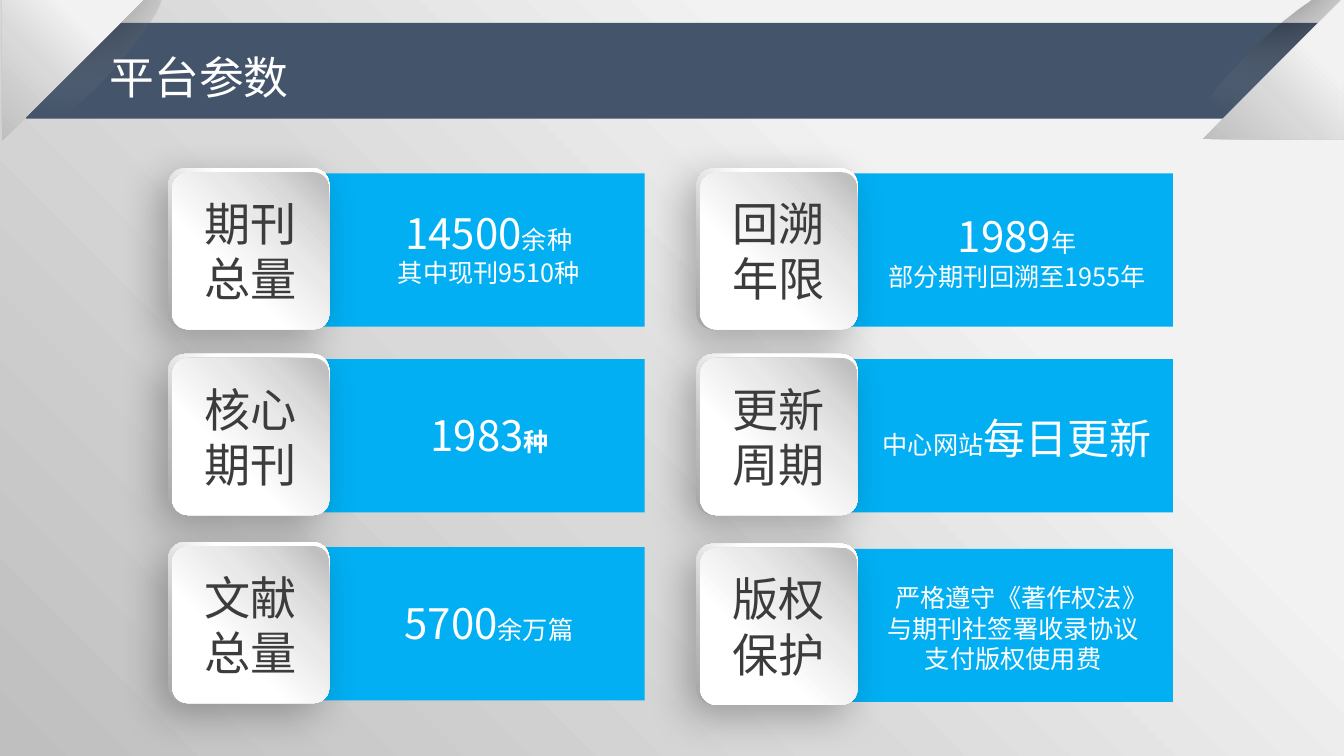
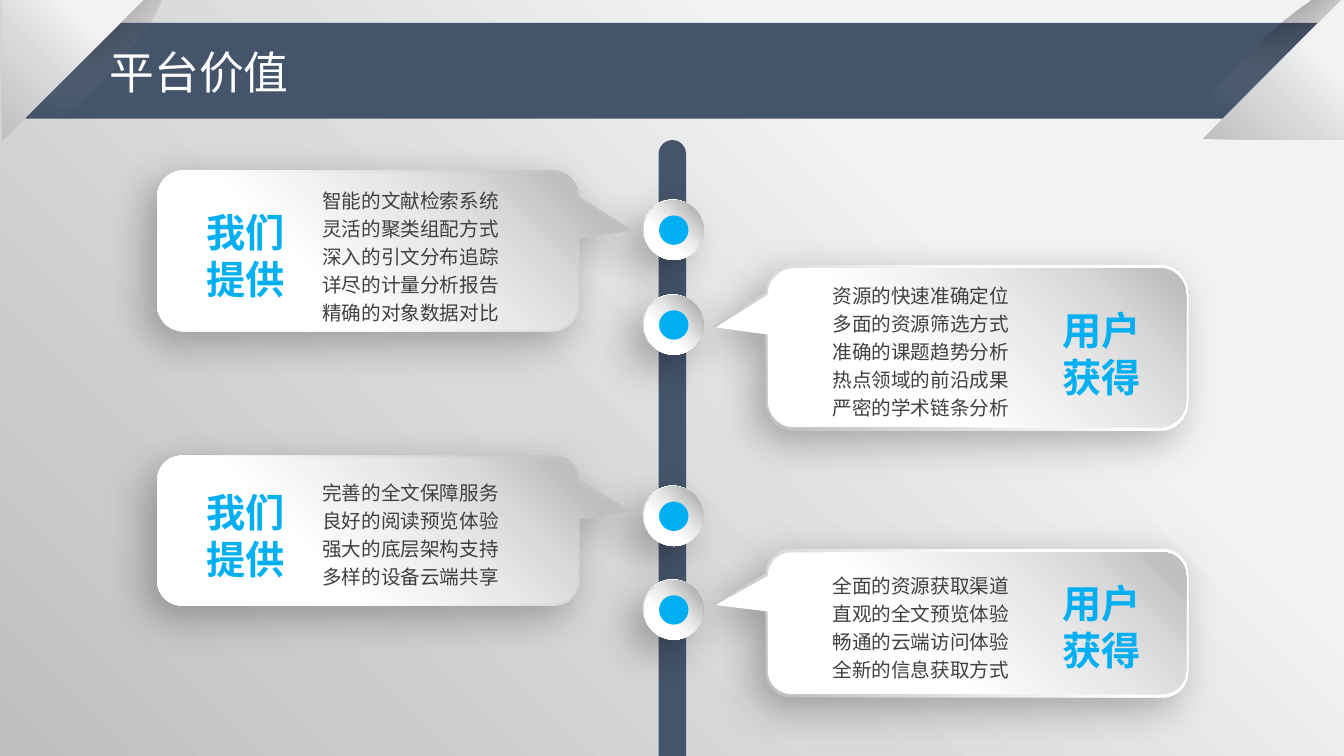
import pptx
import pptx.dml.color
import pptx.enum.shapes
import pptx.enum.text
import pptx.oxml
import pptx.oxml.ns
import pptx.util

Cm, Pt = pptx.util.Cm, pptx.util.Pt
qn = pptx.oxml.ns.qn
SHAPE = pptx.enum.shapes.MSO_SHAPE
CENTER = pptx.enum.text.PP_ALIGN.CENTER
LEFT = pptx.enum.text.PP_ALIGN.LEFT

# Shared style
FONT = "Noto Sans CJK SC"
NAVY, BLUE, WHITE = "44546A", "02AFF3", "FFFFFF"
CARD_TEXT, LIST_TEXT = "3C3C3C", "404040"
TOP_RIGHT, BOTTOM_LEFT = (100, 0, 0, 100), (0, 100, 100, 0)
BAND_SHADE = (50, -80, 50, 180)

# Gradients: stops of position, colour and optional opacity
BACKDROP = [(9, "F2F2F2"), (29, "F2F2F2"), (59, "D9D9D9"), (100, "BFBFBF")]
SHADE = [(0, "404040", 40), (32, "000000", 30), (100, "E7E6E6", 0)]
CARD_RIM = [(0, WHITE), (35, WHITE), (74, "BFBFBF"), (100, "A6A6A6")]
FACE = [(0, WHITE), (35, WHITE), (63, "E9E9E9"), (79, "D9D9D9"), (95, "BFBFBF")]
RIM = [(0, WHITE), (35, WHITE), (100, "BFBFBF")]
KNOB = [(0, WHITE), (35, WHITE), (56, "E9E9E9"), (95, "A6A6A6")]

# Parameter cards: title, column, top, text offset, first line indent, lines of runs
COLUMN_LEFTS = (4.24, 17.55)
CARDS = [
    ("期刊总量", 0, 4.24, (0, 0.86), 0, [[("14500", 30), ("余种", 18)], [("其中现刊9510种", 18)]]),
    ("核心期刊", 0, 8.92, (0.02, 1.27), 0, [[("1983", 30), ("种", 18, True)]]),
    ("文献总量", 0, 13.66, (0, 1.27), 0, [[("5700", 30), ("余万篇", 18)]]),
    ("回溯年限", 1, 4.24, (0, 0.94), 0, [[("1989", 30), ("年", 18)], [("部分期刊回溯至1955年", 18)]]),
    ("更新周期", 1, 8.92, (0, 1.35), 0, [[("中心网站", 18), ("每日更新", 30)]]),
    ("版权保护", 1, 13.7, (-0.1, 0.86), 0.42,
     [[("严格遵守《著作权法》", 18)], [("与期刊社签署收录协议", 18)], [("支付版权使用费", 18)]]),
]

# Timeline sides: heading, callout left, heading left, list left, mirrored, glow, angle
SIDES = {
    "provide": (("我们", "提供"), 3.96, 4.95, 7.87, True, BOTTOM_LEFT, 225),
    "gain": (("用户", "获得"), 19.3, 26.52, 20.73, False, TOP_RIGHT, 315),
}

# Timeline stops: side, knot top, callout top and height, heading top, list top, lines
STOPS = [
    ("provide", 5.03, 4.29, 4.06, 5.13, 4.52,
     ["智能的文献检索系统", "灵活的聚类组配方式", "深入的引文分布追踪", "详尽的计量分析报告", "精确的对象数据对比"]),
    ("gain", 7.42, 6.68, 4.17, 7.59, 6.91,
     ["资源的快速准确定位", "多面的资源筛选方式", "准确的课题趋势分析", "热点领域的前沿成果", "严密的学术链条分析"]),
    ("provide", 12.24, 11.48, 3.78, 12.19, 11.89,
     ["完善的全文保障服务", "良好的阅读预览体验", "强大的底层架构支持", "多样的设备云端共享"]),
    ("gain", 14.6, 13.84, 3.73, 14.48, 14.22,
     ["全面的资源获取渠道", "直观的全文预览体验", "畅通的云端访问体验", "全新的信息获取方式"]),
]


def rgb(value):
    return pptx.dml.color.RGBColor.from_string(value)


def xml(text):
    """Parse an element whose first tag has attributes."""
    namespace = pptx.oxml.ns.nsdecls("a")
    return pptx.oxml.parse_xml(text.replace(" ", f" {namespace} ", 1))


def gradient(stops, direction):
    """Build a gradient; direction is an angle or a focus rectangle."""
    marks = ""
    for position, color, *opacity in stops:
        alpha = f'<a:alpha val="{opacity[0] * 1000}"/>' if opacity else ""
        marks += f'<a:gs pos="{position * 1000}"><a:srgbClr val="{color}">{alpha}</a:srgbClr></a:gs>'
    if isinstance(direction, tuple):
        edges = " ".join(f'{edge}="{value * 1000}"' for edge, value in zip("ltrb", direction))
        course = f'<a:path path="circle"><a:fillToRect {edges}/></a:path>'
    else:
        course = f'<a:lin ang="{direction * 60000}" scaled="0"/>'
    return xml(f'<a:gradFill rotWithShape="1"><a:gsLst>{marks}</a:gsLst>{course}</a:gradFill>')


def add_shape(slide, kind, box, fill, direction=None, rotation=0, adjust=(), shadow=None, mirrored=False):
    shape = slide.shapes.add_shape(kind, *map(Cm, box))
    shape.rotation = rotation
    shape.shadow.inherit = False
    shape.line.fill.background()
    for index, value in enumerate(adjust):
        shape.adjustments[index] = value
    properties = shape.element.spPr
    if direction is None:
        shape.fill.solid()
        shape.fill.fore_color.rgb = rgb(fill)
    else:
        shape.fill.background()
        properties.replace(properties.find(qn("a:noFill")), gradient(fill, direction))
    if mirrored:
        properties.find(qn("a:xfrm")).set("flipH", "1")
    if shadow:
        blur, distance = map(Pt, shadow)
        properties.find(qn("a:effectLst")).append(xml(
            f'<a:outerShdw blurRad="{blur}" dist="{distance}" dir="{133 * 60000}" algn="ctr" '
            'rotWithShape="0"><a:srgbClr val="000000"><a:alpha val="27000"/></a:srgbClr></a:outerShdw>'))
    return shape


def style(paragraph, color, size=None, bold=None, align=LEFT):
    paragraph.alignment = align
    font = paragraph.font
    font.color.rgb = rgb(color)
    font.name = FONT
    font.bold = bold
    if size:
        font.size = Pt(size)
    defaults = paragraph._p.pPr.find(qn("a:defRPr"))
    defaults.append(xml(f'<a:ea typeface="{FONT}"/>'))


def add_text(slide, box, lines, color, size=None, bold=None, align=LEFT, wrap=True, spacing=None):
    """Add a text box; a line is a string or a list of (text, size, bold) runs."""
    frame = slide.shapes.add_textbox(*map(Cm, box)).text_frame
    frame.word_wrap = wrap
    for index, line in enumerate(lines):
        paragraph = frame.add_paragraph() if index else frame.paragraphs[0]
        style(paragraph, color, size, bold, align)
        if spacing:
            paragraph.line_spacing = Pt(spacing)
        if isinstance(line, str):
            paragraph.add_run().text = line
            continue
        for text, run_size, *run_bold in line:
            run = paragraph.add_run()
            run.text = text
            run.font.size = Pt(run_size)
            if run_bold:
                run.font.bold = run_bold[0]
    return frame


def add_slide(presentation, title, title_top):
    """Add a slide with backdrop, title band and folded corners."""
    slide = presentation.slides.add_slide(presentation.slide_layouts[6])
    slide.background.fill.solid()
    backdrop = slide.element.find(".//" + qn("p:bgPr"))
    backdrop.replace(backdrop[0], gradient(BACKDROP, TOP_RIGHT))
    add_shape(slide, SHAPE.RECTANGLE, (0.66, 0.58, 33.2, 2.41), NAVY)
    corners = [((-1.3, 0.99), 315.5, (0.05, 0), 90), ((28.93, 1.04), 135.5, (30.3, -0.05), 270)]
    for shade_at, shade_turn, fold_at, fold_turn in corners:
        add_shape(slide, SHAPE.OVAL, (*shade_at, 6.27, 1.5), SHADE, BAND_SHADE, shade_turn)
        add_shape(slide, SHAPE.RIGHT_TRIANGLE, (*fold_at, 3.56, 3.56), BACKDROP, TOP_RIGHT, fold_turn)
    add_text(slide, (2.51, title_top, 5.08, 1.63), [title], WHITE, 32, wrap=False)
    return slide


def add_card(slide, title, column, top, offset, indent, lines):
    left = COLUMN_LEFTS[column]
    add_shape(slide, SHAPE.RECTANGLE, (left + 3.88, top + 0.13, 8.13, 3.86), BLUE)
    add_shape(slide, SHAPE.ROUNDED_RECTANGLE, (left, top, 4.06, 4.06), CARD_RIM, TOP_RIGHT,
              adjust=[0.1], shadow=(29, 11))
    face = add_shape(slide, SHAPE.ROUNDED_RECTANGLE, (left + 0.1, top + 0.1, 3.96, 3.96), FACE,
                     BOTTOM_LEFT, adjust=[0.1])
    face.text_frame.word_wrap = True
    paragraph = face.text_frame.paragraphs[0]
    paragraph.add_run().text = title
    style(paragraph, CARD_TEXT, 33, align=CENTER)
    box = (left + 4.22 + offset[0], top + offset[1], 7.72, 2.31)
    frame = add_text(slide, box, lines, WHITE, align=CENTER)
    if indent:
        frame.paragraphs[0]._p.pPr.set("marL", str(Cm(indent)))


def add_stop(slide, side, knot_top, top, height, heading_top, list_top, lines):
    heading, left, heading_left, list_left, mirrored, glow, angle = SIDES[side]
    # Knot on the spine
    add_shape(slide, SHAPE.OVAL, (16.2, knot_top, 1.5, 1.5), RIM, TOP_RIGHT, shadow=(28, 15))
    add_shape(slide, SHAPE.OVAL, (16.23, knot_top + 0.02, 1.5, 1.5), KNOB, BOTTOM_LEFT)
    add_shape(slide, SHAPE.OVAL, (16.61, knot_top + 0.4, 0.74, 0.74), BLUE)
    # Callout with rim and face
    pointer = [-0.625, -0.128, 0.167]
    add_shape(slide, SHAPE.ROUNDED_RECTANGULAR_CALLOUT, (left, top, 10.64, height), RIM, glow,
              adjust=pointer, shadow=(29, 11), mirrored=mirrored)
    add_shape(slide, SHAPE.ROUNDED_RECTANGULAR_CALLOUT,
              (left + 0.05, top + 0.08, 10.54, height - 0.16), FACE, angle,
              adjust=pointer, mirrored=mirrored)
    add_text(slide, (list_left, list_top, 5.44, 3.76), lines, LIST_TEXT, 14, spacing=20)
    add_text(slide, (heading_left, heading_top, 2.51, 2.64), heading, BLUE, 28, True, wrap=False)


def main():
    presentation = pptx.Presentation()
    presentation.slide_width, presentation.slide_height = Cm(33.87), Cm(19.05)

    # Platform parameters
    slide = add_slide(presentation, "平台参数", 1.12)
    for card in CARDS:
        add_card(slide, *card)

    # Platform value
    slide = add_slide(presentation, "平台价值", 0.99)
    add_shape(slide, SHAPE.ROUNDED_RECTANGLE, (16.6, 3.53, 0.69, 16.13), NAVY, adjust=[0.5])
    for stop in STOPS:
        add_stop(slide, *stop)

    presentation.save("out.pptx")


if __name__ == "__main__":
    main()
